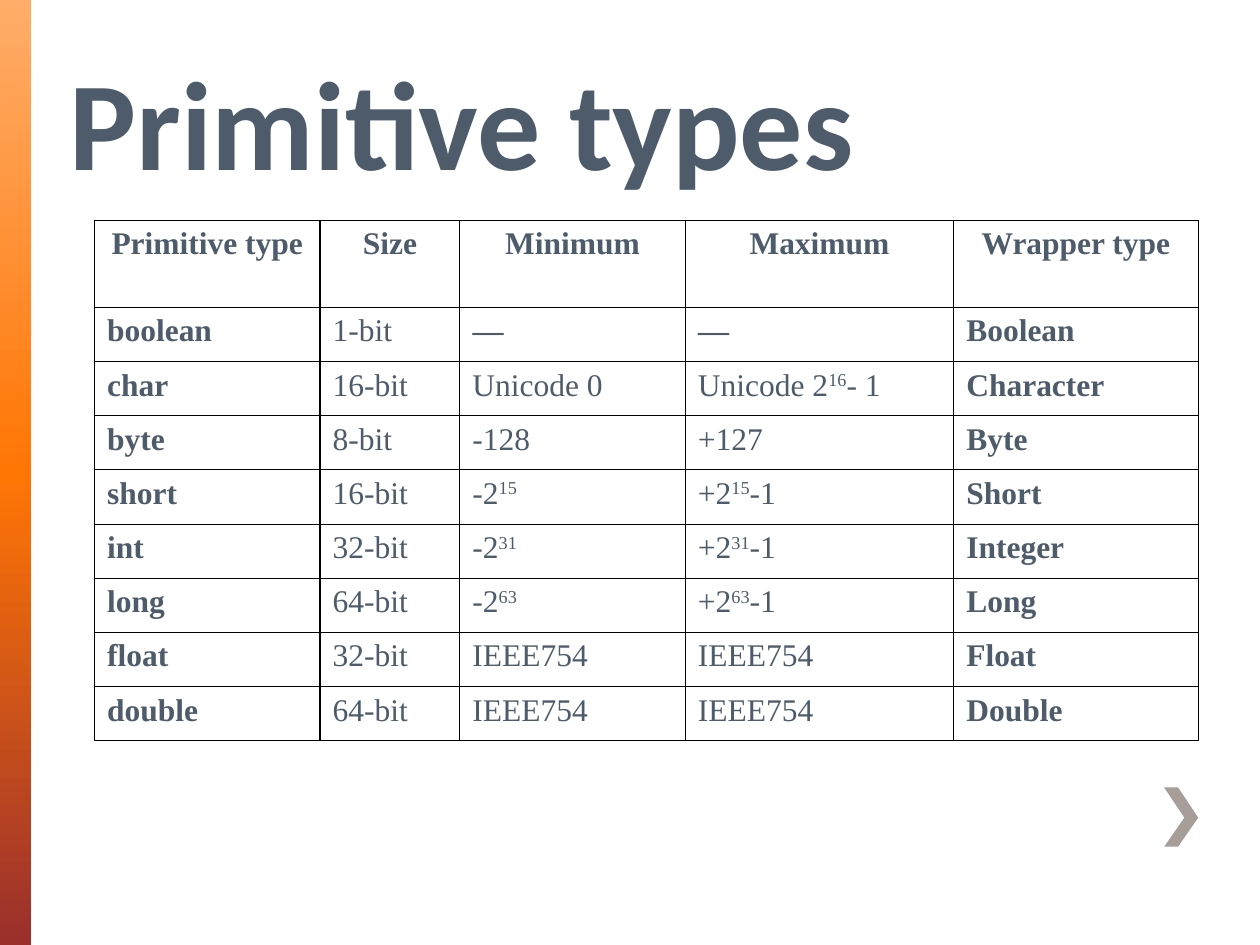
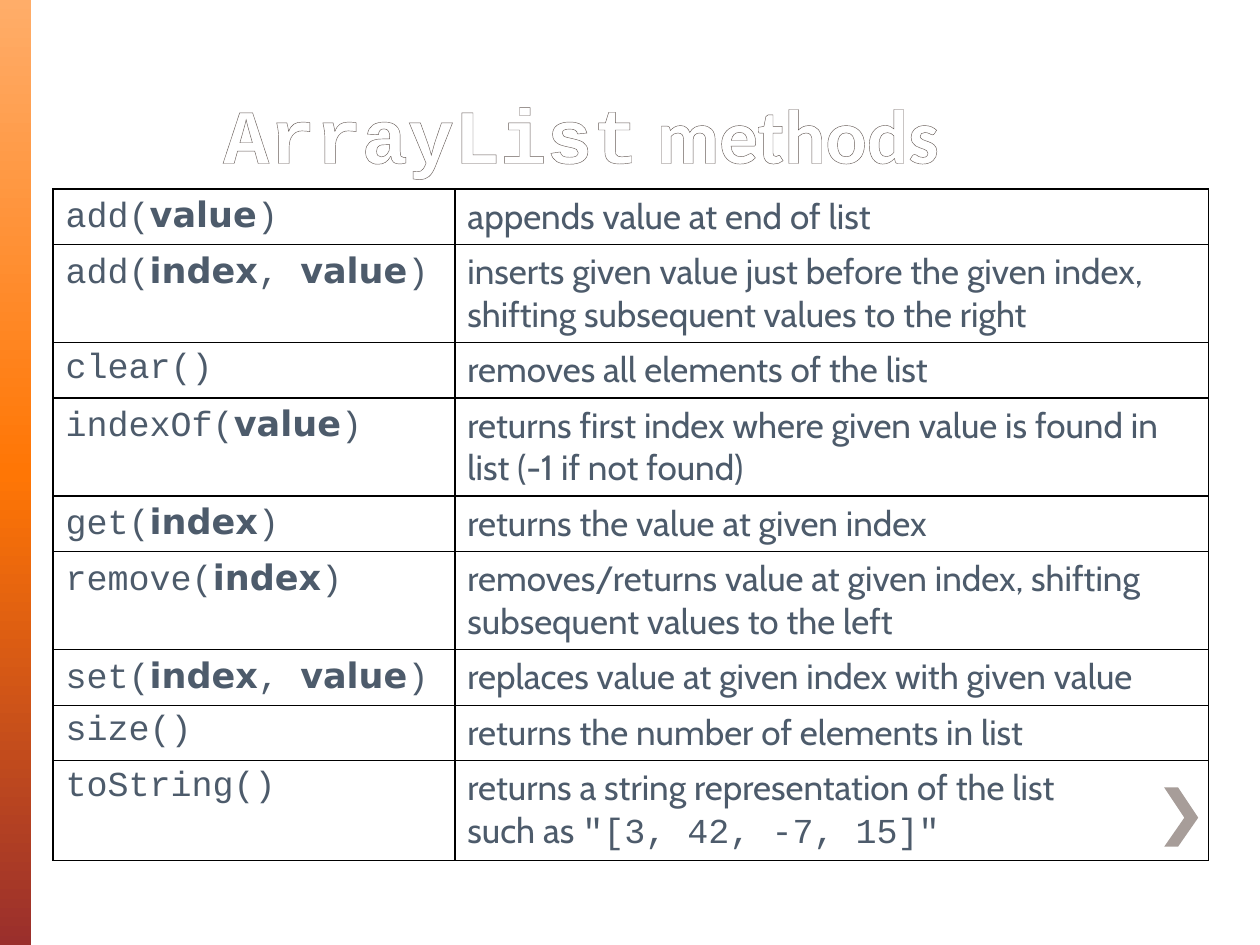
from lxml.etree import SubElement
from pptx import Presentation
from pptx.dml.color import RGBColor
from pptx.enum.shapes import MSO_SHAPE
from pptx.enum.text import MSO_ANCHOR, MSO_AUTO_SIZE, PP_ALIGN
from pptx.oxml.ns import qn
from pptx.util import Inches, Pt

SLATE = RGBColor(0x4D, 0x5B, 0x6B)
WHITE = RGBColor(0xFF, 0xFF, 0xFF)
BLACK = RGBColor(0x00, 0x00, 0x00)
TAUPE = RGBColor(0xA7, 0x9D, 0x99)
TITLE_OUTLINE = RGBColor(0x67, 0x5D, 0x59)
BAND_STOPS = [
    (0, RGBColor(0xFF, 0xAD, 0x69)),
    (50, RGBColor(0xFF, 0x76, 0x05)),
    (100, RGBColor(0x9A, 0x2F, 0x2C)),
]
HEADING, SERIF, SANS = "Calibri", "Times New Roman", "Arial"
CODE, ARGUMENT, PROSE = "Courier New", "DejaVu Sans", "Cabin"

CHEVRON = [(9.35, 6.25), (9.24, 6.25), (9.4, 6.49), (9.24, 6.72), (9.35, 6.72), (9.51, 6.49)]

# Text between carets is superscript.
TYPE_HEADER = ("Primitive type", "Size", "Minimum", "Maximum", "Wrapper type")
TYPES = [
    ("boolean", "1-bit", "—", "—", "Boolean"),
    ("char", "16-bit", "Unicode 0", "Unicode 2^16^- 1", "Character"),
    ("byte", "8-bit", "-128", "+127", "Byte"),
    ("short", "16-bit", "-2^15^", "+2^15^-1", "Short"),
    ("int", "32-bit", "-2^31^", "+2^31^-1", "Integer"),
    ("long", "64-bit", "-2^63^", "+2^63^-1", "Long"),
    ("float", "32-bit", "IEEE754", "IEEE754", "Float"),
    ("double", "64-bit", "IEEE754", "IEEE754", "Double"),
]
TYPE_WIDTHS = [1.79, 1.11, 1.79, 2.13, 1.94]
TYPE_HEIGHTS = [0.69] + [0.43] * len(TYPES)

# Text between asterisks is an argument; text between bars is code.
METHODS = [
    ("add(*value*)", ["appends value at end of list"]),
    ("add(*index*, *value*)",
     ["inserts given value just before the given index, shifting subsequent values to the right"]),
    ("clear()", ["removes all elements of the list"]),
    ("indexOf(*value*)",
     ["returns first index where given value is found in list (-1 if not found)"]),
    ("get(*index*)", ["returns the value at given index"]),
    ("remove(*index*)",
     ["removes/returns value at given index, shifting subsequent values to the left"]),
    ("set(*index*, *value*)", ["replaces value at given index with given value"]),
    ("size()", ["returns the number of elements in list"]),
    ("toString()",
     ["returns a string representation of the list", 'such as |"[3, 42, -7, 15]"|']),
]
METHOD_WIDTHS = [3.19, 5.98]
LINE_CHARS = 50
ONE_LINE, TWO_LINES = 0.43, 0.77


def add_solid_fill(parent, color):
    fill = SubElement(parent, qn("a:solidFill"))
    SubElement(fill, qn("a:srgbClr"), val=str(color))


def add_band(slide):
    band = slide.shapes.add_shape(MSO_SHAPE.RECTANGLE, 0, 0, Inches(0.25), Inches(7.5))
    band.shadow.inherit = False
    band.line.fill.background()
    band.fill.gradient()
    band.fill.gradient_angle = 270
    stops = band._element.spPr.find(".//" + qn("a:gsLst"))
    for stop in list(stops):
        stops.remove(stop)
    for percent, color in BAND_STOPS:
        stop = SubElement(stops, qn("a:gs"), pos=str(percent * 1000))
        SubElement(stop, qn("a:srgbClr"), val=str(color))


def add_chevron(slide):
    start, *corners = [(Inches(x), Inches(y)) for x, y in CHEVRON]
    outline = slide.shapes.build_freeform(*start)
    outline.add_line_segments(corners, close=True)
    chevron = outline.convert_to_shape()
    chevron.shadow.inherit = False
    chevron.fill.solid()
    chevron.fill.fore_color.rgb = TAUPE
    chevron.line.fill.background()


def add_title(slide, runs, box, size, color, inset):
    """Fill the title placeholder with outlined (text, font name) runs."""
    title = slide.shapes.title
    title.left, title.top, title.width, title.height = map(Inches, box)
    frame = title.text_frame
    frame.auto_size = MSO_AUTO_SIZE.NONE
    frame.vertical_anchor = MSO_ANCHOR.BOTTOM
    frame.margin_left, frame.margin_bottom = Inches(inset), 0
    paragraph = frame.paragraphs[0]
    paragraph.alignment = PP_ALIGN.LEFT
    paragraph.font.size, paragraph.font.bold = Pt(size), True
    paragraph.font.color.rgb = color
    for text, font_name in runs:
        run = paragraph.add_run()
        run.text = text
        outline = SubElement(run._r.get_or_add_rPr(), qn("a:ln"), w=str(Pt(1)))
        add_solid_fill(outline, TITLE_OUTLINE)
        run.font.color.rgb = color
        run.font.name = font_name


def start_slide(deck, *title):
    slide = deck.slides.add_slide(deck.slide_layouts[5])
    add_band(slide)
    add_chevron(slide)
    add_title(slide, *title)
    return slide


def add_grid(slide, left, top, widths, heights, border):
    """Add an unfilled table with black borders of the given point width."""
    table = slide.shapes.add_table(
        len(heights), len(widths), Inches(left), Inches(top),
        Inches(sum(widths)), Inches(sum(heights))).table
    table.first_row = table.horz_banding = False
    for column, width in zip(table.columns, widths):
        column.width = Inches(width)
    for row, height in zip(table.rows, heights):
        row.height = Inches(height)
    for cell in table.iter_cells():
        properties = cell._tc.get_or_add_tcPr()
        for side in ("lnL", "lnR", "lnT", "lnB"):
            line = SubElement(properties, qn("a:" + side), w=str(Pt(border)))
            add_solid_fill(line, BLACK)
        cell.fill.background()
    return table


def style_paragraph(paragraph, size, font_name=None, bold=False):
    font = paragraph.font
    font.size, font.bold = Pt(size), bold
    font.color.rgb = SLATE
    if font_name:
        font.name = font_name


def add_marked_runs(paragraph, text, mark):
    """Yield (run, marked) for each piece of text, split at the mark."""
    for position, piece in enumerate(text.split(mark)):
        if piece:
            run = paragraph.add_run()
            run.text = piece
            yield run, position % 2 == 1


def add_types_slide(deck):
    slide = start_slide(deck, [("Primitive types", HEADING)], (0.5, 0.3, 9, 1.25), 72, SLATE, 0.05)
    table = add_grid(slide, 0.75, 1.75, TYPE_WIDTHS, TYPE_HEIGHTS, 0.75)
    for row, values in enumerate([TYPE_HEADER] + TYPES):
        for column, value in enumerate(values):
            paragraph = table.cell(row, column).text_frame.paragraphs[0]
            hanging = paragraph._p.get_or_add_pPr()
            hanging.set("marL", str(Inches(0.38)))
            hanging.set("indent", str(-Inches(0.38)))
            if row == 0:
                paragraph.alignment = PP_ALIGN.CENTER
            is_name = row == 0 or column in (0, len(values) - 1)
            style_paragraph(paragraph, 18, SANS if value == "—" else SERIF, is_name)
            for run, is_power in add_marked_runs(paragraph, value, "^"):
                if is_power:
                    run._r.get_or_add_rPr().set("baseline", "30000")


def add_methods_slide(deck):
    title = [("ArrayList", CODE), (" methods", HEADING)]
    slide = start_slide(deck, title, (1.67, 0.17, 7.92, 1.25), 44, WHITE, 0.1)
    heights = [TWO_LINES if len("".join(lines)) > LINE_CHARS else ONE_LINE
               for _, lines in METHODS]
    table = add_grid(slide, 0.42, 1.5, METHOD_WIDTHS, heights, 1)
    for row, (signature, lines) in enumerate(METHODS):
        paragraph = table.cell(row, 0).text_frame.paragraphs[0]
        style_paragraph(paragraph, 20)
        for run, is_argument in add_marked_runs(paragraph, signature, "*"):
            run.font.name = ARGUMENT if is_argument else CODE
            run.font.bold = is_argument
        description = table.cell(row, 1).text_frame
        for number, line in enumerate(lines):
            paragraph = description.add_paragraph() if number else description.paragraphs[0]
            style_paragraph(paragraph, 20)
            for run, is_code in add_marked_runs(paragraph, line, "|"):
                run.font.name = CODE if is_code else PROSE


def main():
    deck = Presentation()
    deck.slide_width, deck.slide_height = Inches(10), Inches(7.5)
    add_types_slide(deck)
    add_methods_slide(deck)
    deck.save("out.pptx")


if __name__ == "__main__":
    main()
